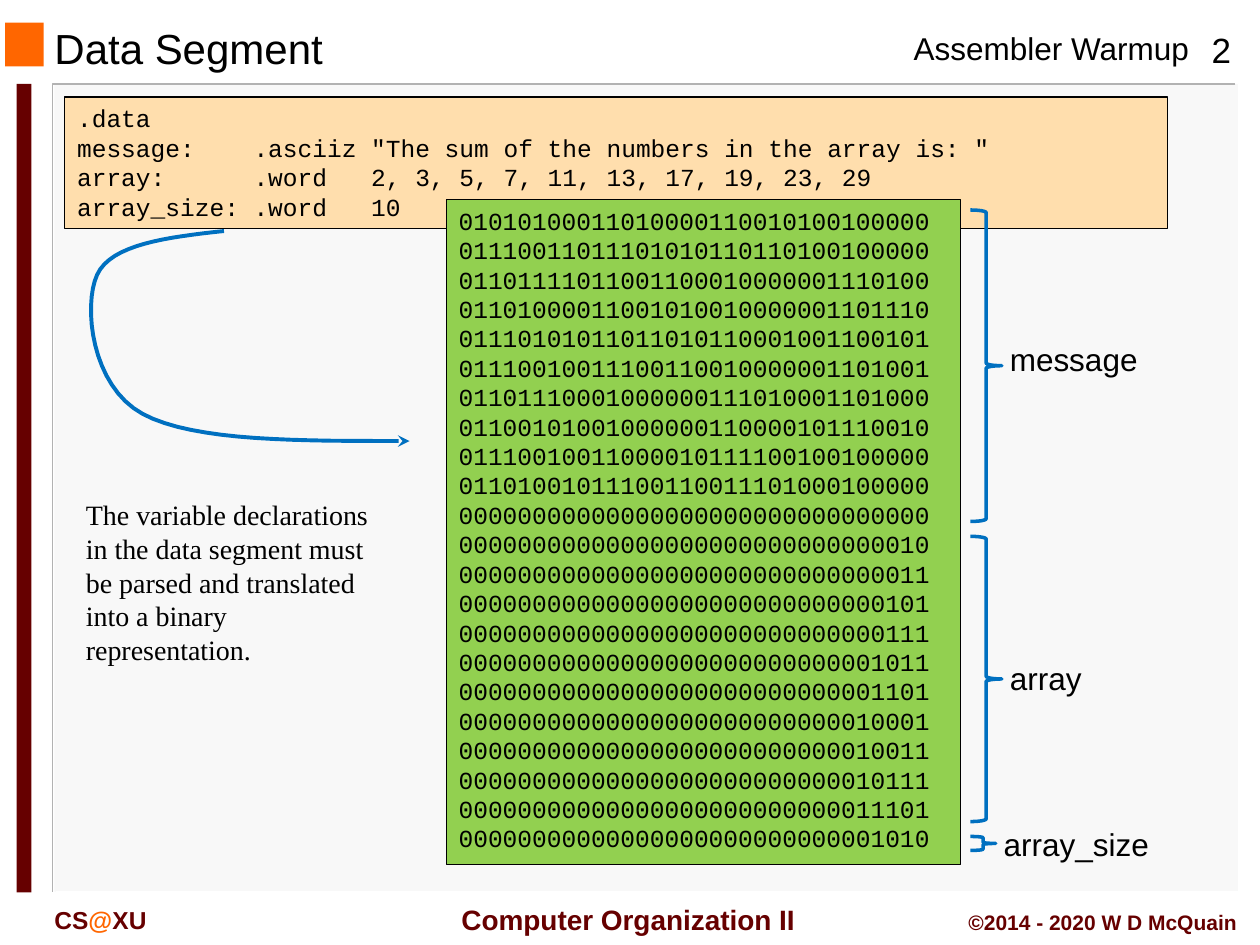
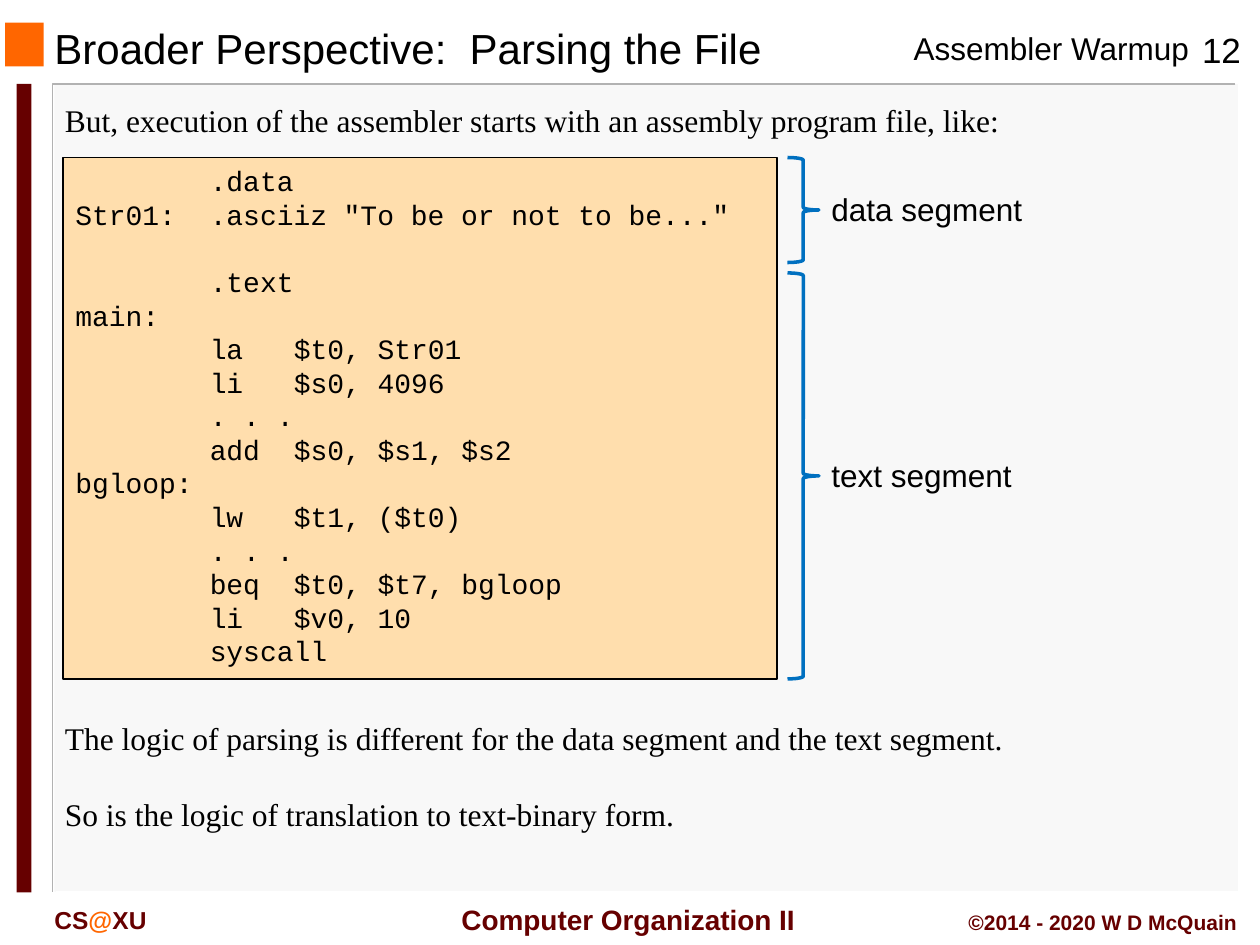
from lxml.etree import SubElement
from pptx import Presentation
from pptx.dml.color import RGBColor
from pptx.enum.shapes import MSO_SHAPE as SHAPE
from pptx.enum.text import MSO_ANCHOR as ANCHOR, PP_ALIGN as ALIGN
from pptx.oxml.ns import qn
from pptx.util import Pt

BLACK = RGBColor(0x00, 0x00, 0x00)
WHITE = RGBColor(0xFF, 0xFF, 0xFF)
PANEL = RGBColor(0xF8, 0xF8, 0xF8)
GREY = RGBColor(0xB2, 0xB2, 0xB2)
ORANGE = RGBColor(0xFF, 0x66, 0x00)
MAROON = RGBColor(0x66, 0x00, 0x00)
SAND = RGBColor(0xFF, 0xDE, 0xAD)
GREEN = RGBColor(0x92, 0xD0, 0x50)
BLUE = RGBColor(0x00, 0x70, 0xC0)

SANS, SERIF, MONO = "Arial", "Times New Roman", "Courier New"
LINE_HEIGHT = 1.2  # times the text size
MONO_WIDTH = 0.6   # character width, times the text size


def paint(shape, fill=None, line=None, width=1):
    """Give a shape its fill and outline, without a shadow."""
    shape.shadow.inherit = False
    if fill is None:
        shape.fill.background()
    else:
        shape.fill.solid()
        shape.fill.fore_color.rgb = fill
    if line is None:
        shape.line.fill.background()
    else:
        shape.line.color.rgb = line
        shape.line.width = Pt(width)
    return shape


def write(slide, text, at, size=18, font=SANS, color=BLACK, bold=False,
          align=ALIGN.LEFT, anchor=ANCHOR.TOP, wrap=True, fill=None,
          accent=None, gaps=(), columns=()):
    """Write text; gaps lists lines with a line of space above them,
    columns the tab stops in characters, accent an orange part."""
    box = [Pt(v) for v in at]
    if fill is None:
        shape = slide.shapes.add_textbox(*box)
    else:
        shape = paint(slide.shapes.add_shape(SHAPE.RECTANGLE, *box), fill, BLACK, 0.75)
    frame = shape.text_frame
    frame.word_wrap = wrap
    frame.vertical_anchor = anchor
    for number, content in enumerate(text.split("\n")):
        paragraph = frame.add_paragraph() if number else frame.paragraphs[0]
        paragraph.alignment = align
        paragraph.line_spacing = Pt(size * LINE_HEIGHT)
        if number in gaps:
            paragraph.space_before = Pt(size * LINE_HEIGHT)
        if columns:
            stops = SubElement(paragraph._p.get_or_add_pPr(), qn("a:tabLst"))
            for column in columns:
                SubElement(stops, qn("a:tab"), algn="l",
                           pos=str(Pt(column * size * MONO_WIDTH)))
        for part in content.partition(accent) if accent else [content]:
            run = paragraph.add_run()
            run.text = part
            run.font.size, run.font.name, run.font.bold = Pt(size), font, bold
            run.font.color.rgb = ORANGE if part == accent else color


deck = Presentation()
deck.slide_width, deck.slide_height = Pt(720), Pt(540)

# Shared frame, title and footers
pages = []
for title, number in [("Data Segment", 2),
                      ("Broader Perspective:  Parsing the File", 12)]:
    slide = deck.slides.add_slide(deck.slide_layouts[6])
    pages.append(slide)
    for fill, at in [(PANEL, (31, 48, 677, 461.5)),
                     (ORANGE, (3, 13, 22, 25)),
                     (MAROON, (9.5, 48, 8.5, 462))]:
        paint(slide.shapes.add_shape(SHAPE.RECTANGLE, *[Pt(v) for v in at]), fill)
    for color, corners in [(GREY, [(706.5, 48), (30, 48), (30, 510)]),
                           (WHITE, [(708, 48), (708, 510), (31.5, 510)])]:
        edge = slide.shapes.build_freeform(*corners[0], scale=Pt(1))
        edge.add_line_segments(corners[1:], close=False)
        paint(edge.convert_to_shape(), line=color)

    write(slide, title, (24, 13.5, 456, 27.5), size=24, anchor=ANCHOR.MIDDLE)
    write(slide, "Assembler Warmup", (515, 13, 173.5, 29), wrap=False)
    write(slide, str(number), (674, 12.5, 48, 31), size=20, align=ALIGN.CENTER)
    write(slide, "CS@XU", (24, 513.5, 108, 24), size=14, color=MAROON,
          bold=True, accent="@")
    write(slide, "Computer Organization II", (253, 512, 212, 26.5), size=16,
          color=MAROON, bold=True, align=ALIGN.CENTER, anchor=ANCHOR.MIDDLE, wrap=False)
    write(slide, "©2014 - 2020 W D McQuain", (528, 516, 186, 21.5), size=12,
          color=MAROON, bold=True, align=ALIGN.RIGHT)

data_page, parsing_page = pages

# Data segment: declarations and their binary form
message = "The sum of the numbers in the array is: "
array = [2, 3, 5, 7, 11, 13, 17, 19, 23, 29]
declarations = "\n".join([
    ".data",
    f'message:\t.asciiz\t"{message}"',
    f"array:\t.word\t{', '.join(str(n) for n in array)}",
    f"array_size:\t.word\t{len(array)}",
])
message_words = ["".join(f"{ord(letter):08b}" for letter in message[i:i + 4])
                 for i in range(0, len(message), 4)]
number_words = [f"{n:032b}" for n in [0, *array, len(array)]]

write(data_page, declarations, (37, 55.5, 630, 75), size=14, font=MONO,
      fill=SAND, columns=(12, 20))
write(data_page, "\n".join(message_words + number_words), (255, 114, 294, 380),
      size=14, font=MONO, fill=GREEN)
write(data_page, "The variable declarations in the data segment must be parsed "
      "and translated into a binary representation.",
      (42, 281, 183, 104.5), size=16, font=SERIF)

# Curved arrow from the declarations to the binary form
bends = [[(128, 132), (96, 135.5), (63.5, 139.5), (55.5, 157)],
         [(55.5, 157), (47.5, 174.5), (52, 220.5), (81.5, 236.5)],
         [(81.5, 236.5), (111, 252.5), (172.5, 252), (234, 252)]]
STEPS = 16
curve = []
for bend in bends:
    for step in range(1, STEPS + 1):
        t = step / STEPS
        weights = ((1 - t) ** 3, 3 * t * (1 - t) ** 2, 3 * t ** 2 * (1 - t), t ** 3)
        curve.append([sum(w * point[axis] for w, point in zip(weights, bend))
                      for axis in (0, 1)])
# Drawn in hundredths of a point to keep the curve smooth
outline = data_page.shapes.build_freeform(12800, 13200, scale=Pt(1) / 100)
outline.add_line_segments([(x * 100, y * 100) for x, y in curve], close=False)
arrow = paint(outline.convert_to_shape(), line=BLUE, width=2.25)
SubElement(arrow.line._get_or_add_ln(), qn("a:tailEnd"), type="stealth")

# Braces with their labels
for slide, label, brace_at, label_at in [
    (data_page, "message", (554.5, 120, 18, 178), (570, 191)),
    (data_page, "array", (554.5, 306.5, 18, 163), (570, 373)),
    (data_page, "array_size", (554.5, 478, 14.5, 8), (566.5, 468)),
    (parsing_page, "data segment", (450, 90, 18, 60), (468, 105)),
    (parsing_page, "text segment", (450, 156, 18, 232), (468, 257)),
]:
    paint(slide.shapes.add_shape(SHAPE.RIGHT_BRACE, *[Pt(v) for v in brace_at]),
          line=BLUE, width=2)
    write(slide, label, (*label_at, 138, 29))

# Parsing the file: program and remarks
program = "\n".join([
    "\t.data",
    'Str01:\t.asciiz "To be or not to be..."',
    "\t.text",
    "main:",
    "\tla\t$t0, Str01",
    "\tli\t$s0, 4096",
    "\t. . .",
    "\tadd\t$s0, $s1, $s2",
    "bgloop:",
    "\tlw\t$t1, ($t0)",
    "\t. . .",
    "\tbeq\t$t0, $t7, bgloop",
    "\tli\t$v0, 10",
    "\tsyscall",
])
write(parsing_page, "But, execution of the assembler starts with an assembly "
      "program file, like:", (30, 54, 678, 29), font=SERIF)
write(parsing_page, program, (36, 90, 408, 298), size=16, font=MONO, fill=SAND,
      gaps=(2,), columns=(8, 13))
write(parsing_page, "The logic of parsing is different for the data segment and "
      "the text segment.\nSo is the logic of translation to text-binary form.",
      (30, 407.5, 678, 73), font=SERIF, gaps=(1,))

deck.save("out.pptx")
